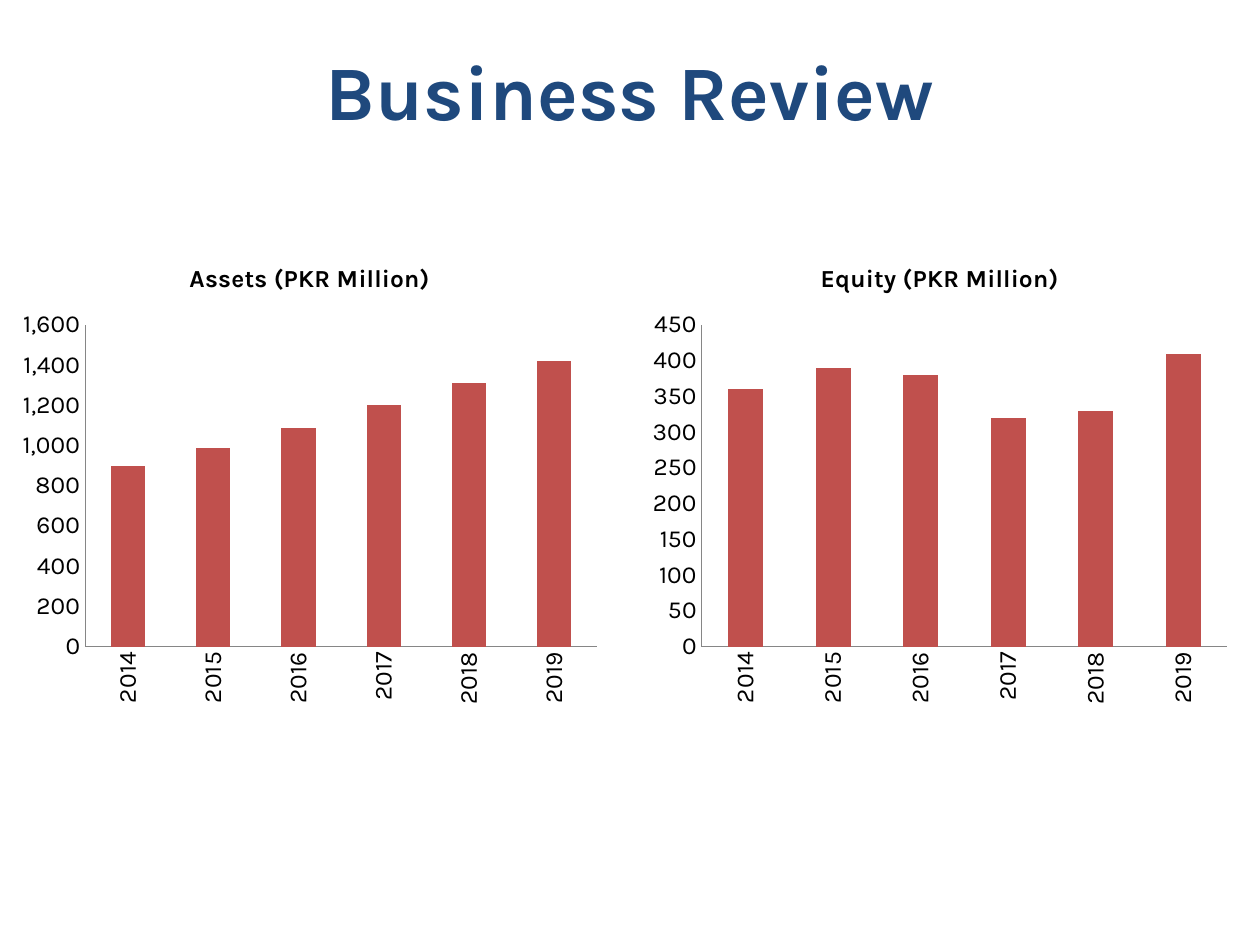
from dataclasses import dataclass

from pptx import Presentation
from pptx.chart.data import CategoryChartData
from pptx.dml.color import RGBColor
from pptx.enum.chart import XL_CHART_TYPE as ChartType, XL_TICK_MARK as Tick
from pptx.enum.text import MSO_ANCHOR as Anchor, PP_ALIGN as Align
from pptx.util import Inches, Pt


@dataclass(frozen=True)
class Theme:
    """Colours and type sizes of the slide."""

    font: str = "Karla"
    heading: str = "1F497D"
    ink: str = "000000"
    bar: str = "C0504D"
    axis: str = "868686"
    heading_size: int = 44
    chart_size: int = 16
    label_size: int = 14


@dataclass(frozen=True)
class Box:
    """Place on a grid of twelve columns and rows to the inch."""

    column: int
    row: int
    columns: int
    rows: int

    def lengths(self) -> tuple:
        """Return left, top, width and height."""
        return tuple(Inches(n / 12) for n in (self.column, self.row, self.columns, self.rows))


@dataclass(frozen=True)
class Measure:
    """A yearly figure and the first column of its chart."""

    title: str
    column: int
    values: tuple


THEME = Theme()
YEARS = [str(year) for year in range(2014, 2020)]
MEASURES = (
    Measure("Assets (PKR Million)", 1, (900, 990, 1090, 1200, 1310, 1420)),
    Measure("Equity (PKR Million)", 61, (360, 390, 380, 320, 330, 410)),
)


def style_font(font, size: int, color: str, bold: bool = False) -> None:
    """Apply the theme typeface with a size, colour and weight."""
    font.name, font.size, font.bold = THEME.font, Pt(size), bold
    font.color.rgb = RGBColor.from_string(color)


def write(frame, text: str, *, size: int, color: str, bold: bool = True) -> None:
    """Put one centred line of formatted text in a frame."""
    line = frame.paragraphs[0]
    line.alignment = Align.CENTER
    run = line.add_run()
    run.text = text
    style_font(run.font, size, color, bold)


def draw_heading(slide, text: str, box: Box) -> None:
    """Draw the slide heading."""
    frame = slide.shapes.add_textbox(*box.lengths()).text_frame
    frame.word_wrap = True
    frame.vertical_anchor = Anchor.MIDDLE
    write(frame, text, size=THEME.heading_size, color=THEME.heading)


def style_axis(axis) -> None:
    """Give an axis a thin line and plain labels without ticks or grid."""
    axis.has_major_gridlines = False
    axis.major_tick_mark = axis.minor_tick_mark = Tick.NONE
    axis.format.line.color.rgb = RGBColor.from_string(THEME.axis)
    axis.format.line.width = Pt(0.75)
    style_font(axis.tick_labels.font, THEME.label_size, THEME.ink)


def draw_measure(slide, measure: Measure) -> None:
    """Draw the column chart of one measure."""
    data = CategoryChartData(number_format="#,##0")
    data.categories = YEARS
    data.add_series("Series 1", measure.values)
    box = Box(measure.column, 23, 57, 45)
    chart = slide.shapes.add_chart(ChartType.COLUMN_CLUSTERED, *box.lengths(), data).chart
    style_font(chart.font, THEME.chart_size, THEME.ink)
    chart.has_legend = False
    chart.has_title = True
    write(chart.chart_title.text_frame, measure.title, size=THEME.label_size, color=THEME.ink)
    chart.chart_title.include_in_layout = False

    for axis in (chart.category_axis, chart.value_axis):
        style_axis(axis)
    chart.category_axis._element.txPr.bodyPr.set("rot", "-5400000")
    chart.value_axis.tick_labels.number_format = "#,##0"
    chart.value_axis.tick_labels.number_format_is_linked = False

    plot = chart.plots[0]
    plot.gap_width = 150
    plot.vary_by_categories = False
    fill = plot.series[0].format.fill
    fill.solid()
    fill.fore_color.rgb = RGBColor.from_string(THEME.bar)


def main() -> None:
    """Build and save the slide."""
    deck = Presentation()
    deck.slide_width, deck.slide_height = Inches(10), Inches(7.5)
    slide = deck.slides.add_slide(deck.slide_layouts[6])
    draw_heading(slide, "Business Review", Box(1, 1, 118, 15))
    for measure in MEASURES:
        draw_measure(slide, measure)
    deck.save("out.pptx")


if __name__ == "__main__":
    main()
